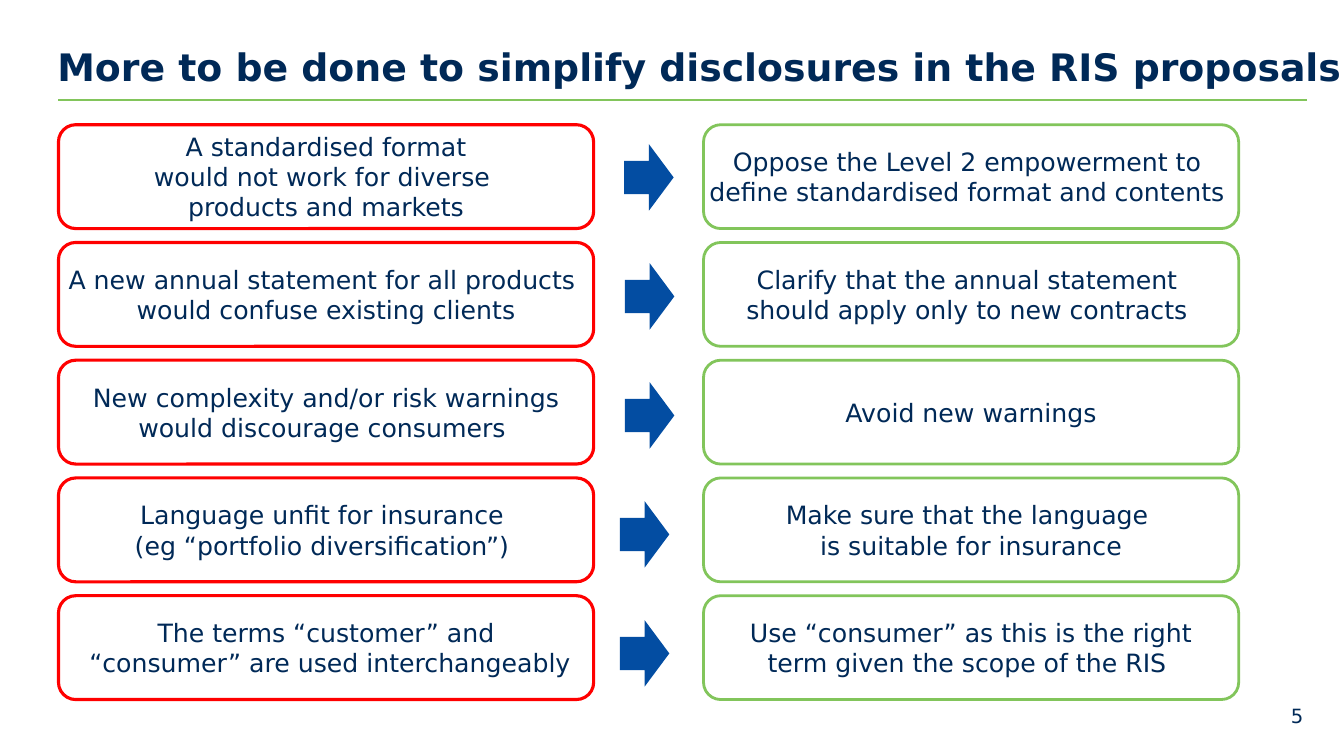
from dataclasses import dataclass

from lxml.etree import SubElement
from pptx import Presentation
from pptx.dml.color import RGBColor
from pptx.enum.shapes import MSO_CONNECTOR, MSO_SHAPE
from pptx.enum.text import MSO_ANCHOR as Anchor, MSO_AUTO_SIZE, PP_ALIGN as Align
from pptx.oxml.ns import qn
from pptx.shapes.autoshape import Shape
from pptx.slide import Slide
from pptx.text.text import TextFrame
from pptx.util import Pt

FONT = "DejaVu Sans"
COLORS = {
    "text": "002957",
    "issue": "FF0000",
    "remedy": "82C55B",
    "arrow": "034DA2",
    "box": "FFFFFF",
}
LEFT = 41.76
BOX_W, BOX_H = 382.3, 74.2
BOX_TOP, BOX_PITCH = 89.1, 84.1
ARROW_TOP, ARROW_PITCH = 103, 85


@dataclass(frozen=True)
class Column:
    left: float
    color: str
    line_width: float


@dataclass(frozen=True)
class Row:
    issue: str
    remedy: str
    arrow_left: float


ISSUES = Column(LEFT, "issue", 2.25)
REMEDIES = Column(502.5, "remedy", 2)
ROWS = [
    Row("A standardised format\nwould not work for diverse \nproducts and markets",
        "Oppose the Level 2 empowerment to \ndefine standardised format and contents ", 445.9),
    Row("A new annual statement for all products \nwould confuse existing clients",
        "Clarify that the annual statement \nshould apply only to new contracts ", 446.4),
    Row("New complexity and/or risk warnings\nwould discourage consumers ",
        "Avoid new warnings", 446.4),
    Row("Language unfit for insurance \n(eg “portfolio diversification”) ",
        "Make sure that the language \nis suitable for insurance", 442.8),
    Row("The terms “customer” and\n “consumer” are used interchangeably",
        " Use “consumer” as this is the right \nterm given the scope of the RIS ", 442.8),
]


def rgb(name: str) -> RGBColor:
    """Return a named colour."""
    return RGBColor.from_string(COLORS[name])


def write(tf: TextFrame, text: str, size: float, align: Align, anchor: Anchor,
          wrap: bool = True, bold: bool = False) -> None:
    """Fill a frame without margins, one paragraph per line of text."""
    tf.margin_left = tf.margin_top = tf.margin_right = tf.margin_bottom = 0
    tf.auto_size = MSO_AUTO_SIZE.NONE
    tf.word_wrap = wrap
    tf.vertical_anchor = anchor
    tf.text = text
    for p in tf.paragraphs:
        p.alignment = align
        p.font.name = FONT
        p.font.size = Pt(size)
        p.font.bold = bold
        p.font.color.rgb = rgb("text")


def add_filled(s: Slide, kind: MSO_SHAPE, left: float, top: float,
               width: float, height: float, fill: str) -> Shape:
    """Add a flat preset shape."""
    sp = s.shapes.add_shape(kind, Pt(left), Pt(top), Pt(width), Pt(height))
    sp.shadow.inherit = False
    sp.fill.solid()
    sp.fill.fore_color.rgb = rgb(fill)
    return sp


def add_box(s: Slide, column: Column, top: float, text: str) -> None:
    """Add one outlined statement box."""
    sp = add_filled(s, MSO_SHAPE.ROUNDED_RECTANGLE, column.left, top, BOX_W, BOX_H, "box")
    sp.line.color.rgb = rgb(column.color)
    sp.line.width = Pt(column.line_width)
    write(sp.text_frame, text, 18, Align.CENTER, Anchor.MIDDLE, wrap=False)


def add_arrow(s: Slide, left: float, top: float) -> None:
    """Add an arrow from an issue to its remedy."""
    sp = add_filled(s, MSO_SHAPE.RIGHT_ARROW, left, top, 35.3, 47.5, "arrow")
    sp.line.fill.background()


def add_heading(s: Slide) -> None:
    """Set the title and the rule beneath it."""
    title = s.shapes.title
    title.left, title.top = Pt(41), Pt(31)
    title.width, title.height = Pt(955.5), Pt(33.8)
    write(title.text_frame, "More to be done to simplify disclosures in the RIS proposals",
          27, Align.LEFT, Anchor.TOP, bold=True)
    rule = s.shapes.add_connector(MSO_CONNECTOR.STRAIGHT, Pt(LEFT), Pt(71.3), Pt(933.8), Pt(71.3))
    rule.line.color.rgb = rgb("remedy")
    rule.line.width = Pt(1)
    SubElement(rule._element.spPr, qn("a:effectLst"))


def main() -> None:
    """Build and save the slide."""
    prs = Presentation()
    prs.slide_width, prs.slide_height = Pt(960), Pt(540)
    s = prs.slides.add_slide(prs.slide_layouts[5])
    add_heading(s)
    number = s.shapes.add_textbox(Pt(707), Pt(493.2), Pt(224), Pt(26.6))
    write(number.text_frame, "5", 14, Align.RIGHT, Anchor.BOTTOM)
    for i, row in enumerate(ROWS):
        top = BOX_TOP + i * BOX_PITCH
        add_box(s, ISSUES, top, row.issue)
        add_box(s, REMEDIES, top, row.remedy)
        add_arrow(s, row.arrow_left, ARROW_TOP + i * ARROW_PITCH)
    prs.save("out.pptx")


if __name__ == "__main__":
    main()
